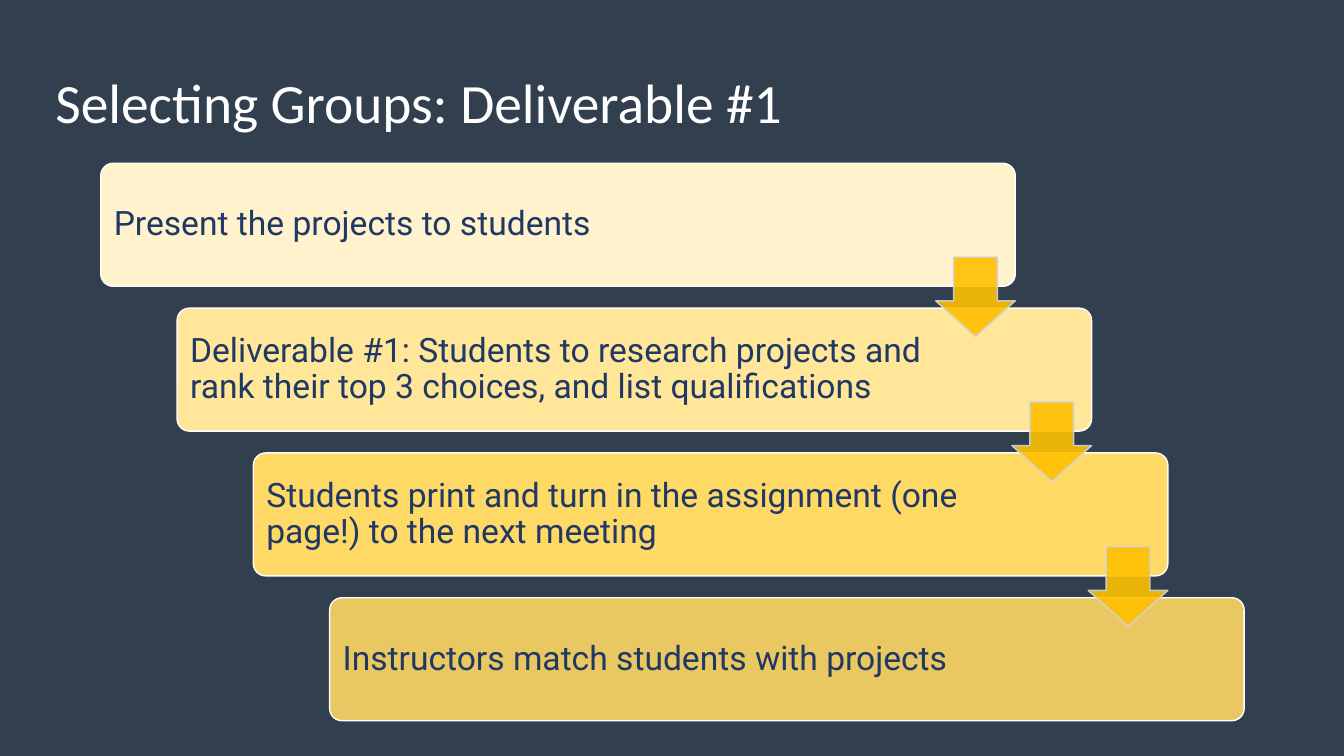
from lxml import etree
from pptx import Presentation
from pptx.dml.color import RGBColor
from pptx.enum.shapes import MSO_SHAPE
from pptx.enum.text import MSO_ANCHOR, PP_ALIGN
from pptx.oxml.ns import qn
from pptx.util import Inches, Pt

ROUNDED = MSO_SHAPE.ROUNDED_RECTANGLE
DOWN_ARROW = MSO_SHAPE.DOWN_ARROW
TOP, MIDDLE = MSO_ANCHOR.TOP, MSO_ANCHOR.MIDDLE
LEFT = PP_ALIGN.LEFT

SLATE = RGBColor(0x32, 0x3F, 0x4F)
WHITE = RGBColor(0xFF, 0xFF, 0xFF)
NAVY = RGBColor(0x20, 0x38, 0x64)
AMBER = RGBColor(0xFF, 0xC0, 0x00)
PALE_BLUE = RGBColor(0xCF, 0xD5, 0xEA)
CREAM = RGBColor(0xFF, 0xF2, 0xCC)
LIGHT_YELLOW = RGBColor(0xFF, 0xE6, 0x99)
YELLOW = RGBColor(0xFF, 0xD9, 0x66)
GOLD = RGBColor(0xEA, 0xC8, 0x61)

STEPS = [
    ("Present the projects to students", CREAM),
    ("Deliverable #1: Students to research projects and rank their "
     "top 3 choices, and list qualifications", LIGHT_YELLOW),
    ("Students print and turn in the assignment (one page!) to the next meeting", YELLOW),
    ("Instructors match students with projects", GOLD),
]
FIRST_LEFT, FIRST_TOP = 1, 1.62
LAST_LEFT, LAST_TOP = 3.27, 5.93
CARD_WIDTH, CARD_HEIGHT = 9.07, 1.22
LABEL_WIDTH, LABEL_MARGIN = 7.45, 0.03
ARROW_SIZE, ARROW_DROP = 0.79, 0.93


class StepSlide:
    def __init__(self, presentation):
        self.slide = presentation.slides.add_slide(presentation.slide_layouts[5])
        self.slide.background.fill.solid()
        self.slide.background.fill.fore_color.rgb = SLATE
        self.steps = self.slide.shapes.add_group_shape()

    def set_text(self, shape, text, font, size, color, anchor):
        frame = shape.text_frame
        frame.word_wrap = True
        frame.vertical_anchor = anchor
        frame.margin_left = frame.margin_right = Inches(0.1)
        frame.margin_top = frame.margin_bottom = Inches(0.1)
        paragraph = frame.paragraphs[0]
        paragraph.alignment = LEFT
        paragraph.line_spacing = 0.9
        run = paragraph.add_run()
        run.text = text
        run.font.name = font
        run.font.size = Pt(size)
        run.font.color.rgb = color

    def title(self, text):
        title = self.slide.shapes.title
        title.left, title.top = Inches(0.45), Inches(0.65)
        title.width, title.height = Inches(12.42), Inches(0.84)
        self.set_text(title, text, "Calibri", 39.6, WHITE, TOP)

    def block(self, preset, left, top, width, height, fill, line, adjustments):
        shape = self.steps.shapes.add_shape(
            preset, Inches(left), Inches(top), Inches(width), Inches(height))
        shape.shadow.inherit = False
        for index, value in enumerate(adjustments):
            shape.adjustments[index] = value
        shape.fill.solid()
        shape.fill.fore_color.rgb = fill
        shape.line.color.rgb = line
        shape.line.width = Pt(1)
        return shape

    def card(self, left, top, text, fill):
        self.block(ROUNDED, left, top, CARD_WIDTH, CARD_HEIGHT, fill, WHITE, [0.1])
        label = self.steps.shapes.add_textbox(
            Inches(left + LABEL_MARGIN), Inches(top + LABEL_MARGIN),
            Inches(LABEL_WIDTH), Inches(CARD_HEIGHT - 2 * LABEL_MARGIN))
        self.set_text(label, text, "Roboto", 24, NAVY, MIDDLE)

    def arrow(self, card_left, card_top):
        """Place an arrow at the card's right edge, pointing to the next card."""
        arrow = self.block(
            DOWN_ARROW, card_left + CARD_WIDTH - ARROW_SIZE, card_top + ARROW_DROP,
            ARROW_SIZE, ARROW_SIZE, AMBER, PALE_BLUE, [0.55, 0.45])
        # The fill and the line are both 90 % opaque
        for color in arrow.element.spPr.iter(qn("a:srgbClr")):
            etree.SubElement(color, qn("a:alpha"), val="90000")


def main():
    presentation = Presentation()
    presentation.slide_width = Inches(13.33)
    presentation.slide_height = Inches(7.5)
    page = StepSlide(presentation)
    page.title("Selecting Groups: Deliverable #1")

    gaps = len(STEPS) - 1
    corners = [(FIRST_LEFT + (LAST_LEFT - FIRST_LEFT) * index / gaps,
                FIRST_TOP + (LAST_TOP - FIRST_TOP) * index / gaps)
               for index in range(len(STEPS))]
    for (left, top), (text, fill) in zip(corners, STEPS):
        page.card(left, top, text, fill)
    for left, top in corners[:-1]:
        page.arrow(left, top)

    presentation.save("out.pptx")


if __name__ == "__main__":
    main()
